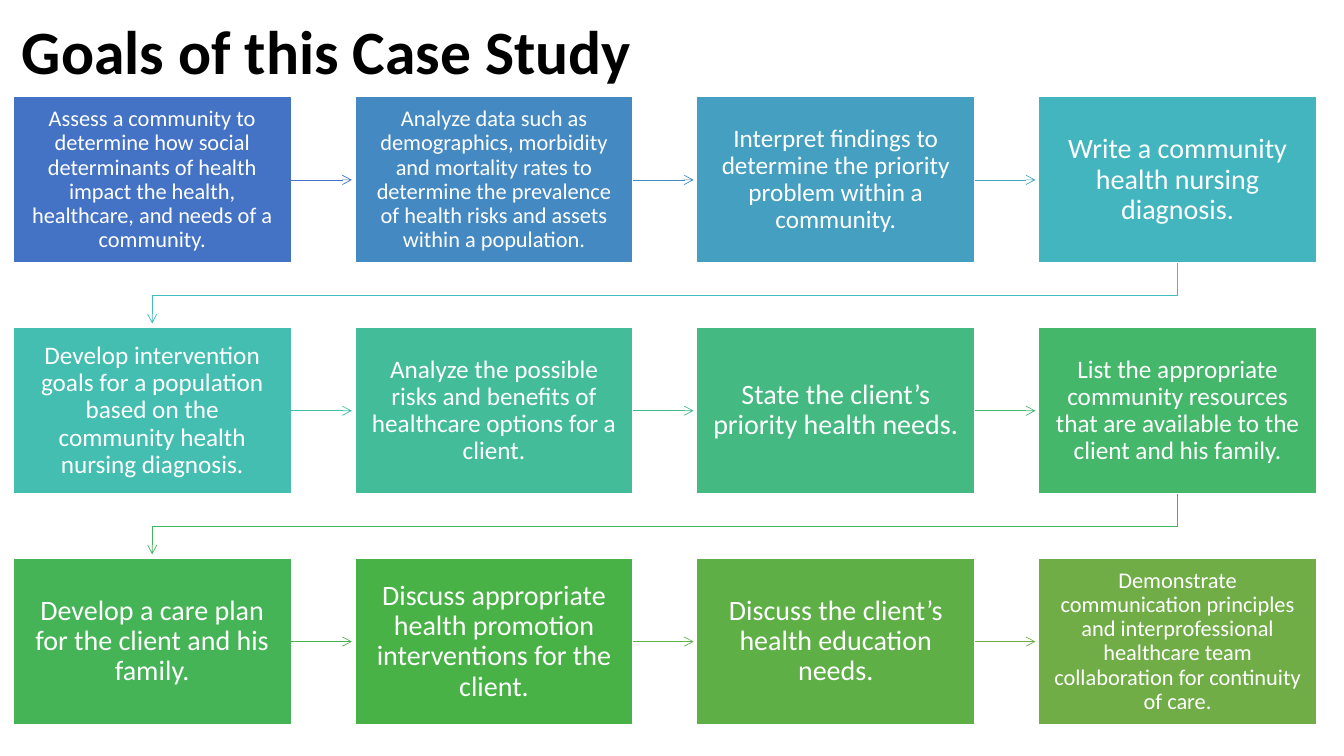
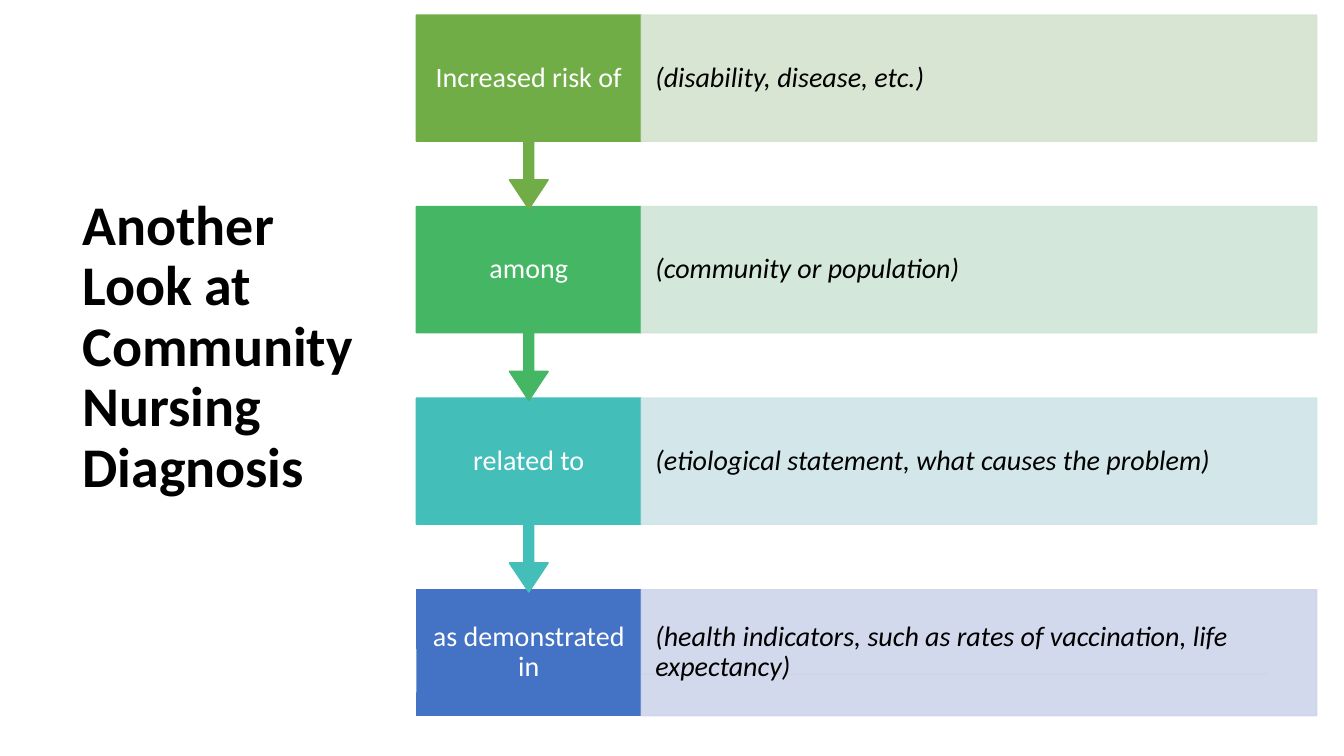
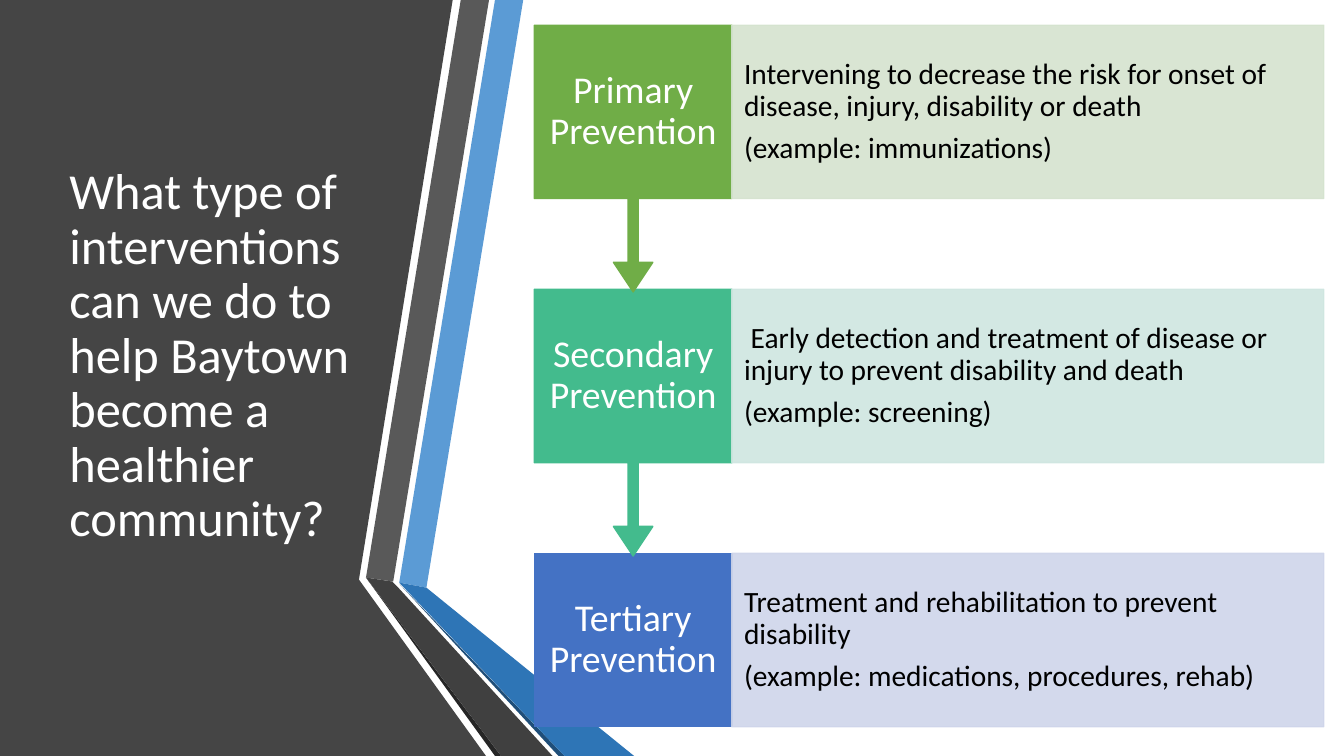
"""Build three community nursing slides: a goal chain and two step ladders."""
from dataclasses import dataclass
from typing import Any, Sequence

from lxml import etree
from pptx import Presentation
from pptx import util as u
from pptx.dml.color import RGBColor
from pptx.enum import shapes, text
from pptx.oxml.ns import qn

WIDTH, HEIGHT = 13.33, 7.5
FONT = "Calibri"
CENTER, LEFT = text.PP_ALIGN.CENTER, text.PP_ALIGN.LEFT
RECT = shapes.MSO_SHAPE.RECTANGLE
DOWN = shapes.MSO_SHAPE.DOWN_ARROW_CALLOUT

HEX = {
    "white": "FFFFFF", "black": "000000", "rule": "D5D5D5",
    "box0": "4472C4", "box1": "4489C2", "box2": "449FC1", "box3": "43B5BF",
    "box4": "43BEB1", "box5": "43BC99", "box6": "44B982", "box7": "44B76B",
    "box8": "45B456", "box9": "49B246", "box10": "5DAF46", "box11": "70AD47",
    "link0": "4472C4", "link1": "448BC2", "link2": "44A3C0", "link3": "43BBBF",
    "link4": "43BDA7", "link5": "43BB8D", "link6": "44B874", "link7": "45B55D",
    "link8": "46B246", "link9": "5BB046", "link10": "70AD47",
    "blue": "4472C4", "teal": "43BEB9", "mint": "43BB8D", "green": "45B664",
    "olive": "70AD47", "pale blue": "CFD5EA", "pale teal": "CFE5E8",
    "pale mint": "CFE6E0", "pale green": "CFE5D8", "pale olive": "D5E3CF",
    "slate": "454545", "sky": "5B9BD5", "gray": "595959", "coal": "262626",
    "navy": "1F4E79", "sea": "2E75B6", "dark": "404040",
}


@dataclass(frozen=True)
class Box:
    """Place and size in inches."""
    x: float
    y: float
    w: float
    h: float


@dataclass(frozen=True)
class Style:
    """Look of one text block."""
    size: float
    color: str = "white"
    bold: bool = False
    italic: bool = False
    align: Any = LEFT
    pad: tuple[float, float] = (0.1, 0.05)
    gap: float = 0


@dataclass(frozen=True)
class Goal:
    """One goal card."""
    size: float
    words: str


@dataclass(frozen=True)
class Step:
    """One ladder step with its label and notes."""
    tone: str
    label: str
    notes: tuple[str, ...]


@dataclass(frozen=True)
class Ladder:
    """Measures and text styles of a step ladder."""
    top: Box
    pitch: float
    wide: float
    label: Style
    note: Style


@dataclass(frozen=True)
class Facet:
    """One filled polygon."""
    tone: str
    points: tuple[tuple[float, float], ...]


GOALS = (
    Goal(16, "Assess a community to determine how social determinants of health "
             "impact the health, healthcare, and needs of a community."),
    Goal(16, "Analyze data such as demographics, morbidity and mortality rates to "
             "determine the prevalence of health risks and assets within a population."),
    Goal(18, "Interpret findings to determine the priority problem within a community."),
    Goal(20, "Write a community health nursing diagnosis."),
    Goal(18, "Develop intervention goals for a population based on the community "
             "health nursing diagnosis."),
    Goal(18, "Analyze the possible risks and benefits of healthcare options for a client."),
    Goal(20, "State the client’s priority health needs."),
    Goal(18, "List the appropriate community resources that are available to the "
             "client and his family."),
    Goal(20, "Develop a care plan for the client and his family."),
    Goal(20, "Discuss appropriate health promotion interventions for the client."),
    Goal(20, "Discuss the client’s health education needs."),
    Goal(16, "Demonstrate communication principles and interprofessional healthcare "
             "team collaboration for continuity of care."),
)
COLS = 4
CARD = Box(0.13, 0.96, 2.76, 1.65)
STRIDE = (3.39, 2.29)
REACH = 0.6

PARTS = (
    Step("olive", "Increased risk of", ("(disability, disease, etc.)",)),
    Step("green", "among", ("(community or population)",)),
    Step("teal", "related to", ("(etiological statement, what causes the problem)",)),
    Step("blue", "as demonstrated in",
         ("(health indicators, such as rates of vaccination, life expectancy)",)),
)
LEVELS = (
    Step("olive", "Primary Prevention",
         ("Intervening to decrease the risk for onset of disease, injury, "
          "disability or death", "(example: immunizations)")),
    Step("mint", "Secondary Prevention",
         (" Early detection and treatment of disease or injury to prevent "
          "disability and death", "(example: screening)")),
    Step("blue", "Tertiary Prevention",
         ("Treatment and rehabilitation to prevent disability",
          "(example: medications, procedures, rehab)")),
)
PHRASE = Ladder(Box(4.13, 0.15, 2.23, 1.25), 1.9, 6.7,
                Style(20, align=CENTER, pad=(0.16, 0.16)),
                Style(20, "black", italic=True, pad=(0.14, 0.28)))
PREVENT = Ladder(Box(5.3, 0.25, 1.96, 1.72), 2.62, 5.87,
                 Style(27, align=CENTER, pad=(0.14, 0.21)),
                 Style(21, "black", pad=(0.12, 0.29), gap=7))

FACETS = (
    Facet("slate", ((0, 0), (4.49, 0), (3.56, 5.75), (4.82, HEIGHT), (0, HEIGHT))),
    Facet("sky", ((3.96, 5.78), (4.23, 5.83), (5.19, 0), (4.91, 0))),
    Facet("gray", ((4.85, 0), (4.57, 0), (3.63, 5.73), (3.9, 5.77))),
    Facet("coal", ((3.63, 5.73), (4.91, HEIGHT), (4.97, HEIGHT))),
    Facet("navy", ((3.96, 5.79), (5.54, HEIGHT), (5.6, HEIGHT))),
    Facet("sea", ((3.96, 5.78), (5.6, HEIGHT), (6.29, HEIGHT), (4.23, 5.83))),
    Facet("dark", ((5.48, HEIGHT), (3.95, 5.83), (3.89, 5.77), (3.63, 5.73),
                   (4.97, HEIGHT))),
)


def tint(name: str) -> RGBColor:
    """Return a named colour."""
    return RGBColor.from_string(HEX[name])


def assign(target: Any, values: dict[str, Any]) -> None:
    """Set each named attribute on the target."""
    for key, value in values.items():
        setattr(target, key, value)


def place(box: Box) -> tuple[u.Length, ...]:
    """Return a box in slide units."""
    return tuple(u.Inches(n) for n in (box.x, box.y, box.w, box.h))


def write(shape: Any, lines: Sequence[str], style: Style) -> None:
    """Fill a shape with styled paragraphs."""
    frame = shape.text_frame
    across, down = (u.Inches(n) for n in style.pad)
    assign(frame, {"word_wrap": True, "vertical_anchor": text.MSO_ANCHOR.MIDDLE,
                   "margin_left": across, "margin_right": across,
                   "margin_top": down, "margin_bottom": down})
    for i, line in enumerate(lines):
        para = frame.add_paragraph() if i else frame.paragraphs[0]
        assign(para, {"alignment": style.align, "line_spacing": 0.9,
                      "space_before": u.Pt(style.gap if i else 0)})
        run = para.add_run()
        run.text = line
        assign(run.font, {"name": FONT, "size": u.Pt(style.size),
                          "bold": style.bold, "italic": style.italic})
        run.font.color.rgb = tint(style.color)


def title(slide: Any, box: Box, words: str, style: Style) -> None:
    """Add a slide title."""
    write(slide.shapes.add_textbox(*place(box)), [words], style)


def paint(shape: Any, fill: str, edge: str | None = None) -> None:
    """Give a shape a flat fill and an optional thin edge."""
    shape.shadow.inherit = False
    shape.fill.solid()
    shape.fill.fore_color.rgb = tint(fill)
    if edge:
        shape.line.color.rgb = tint(edge)
        shape.line.width = u.Pt(1)
    else:
        shape.line.fill.background()


def block(slide: Any, box: Box, fill: str, edge: str | None = None,
          kind: Any = RECT) -> Any:
    """Add a painted preset shape."""
    shape = slide.shapes.add_shape(kind, *place(box))
    paint(shape, fill, edge)
    return shape


def fade(shape: Any, share: int) -> None:
    """Set fill and line opacity in percent."""
    for node in shape._element.spPr.iter(qn("a:srgbClr")):
        etree.SubElement(node, qn("a:alpha"), val=str(share * 1000))


def trace(slide: Any, points: Sequence[tuple[float, float]], close: bool) -> Any:
    """Add an outline through points given in inches."""
    path = [(u.Inches(x), u.Inches(y)) for x, y in points]
    pen = slide.shapes.build_freeform(*path[0])
    pen.add_line_segments(path[1:], close=close)
    return pen.convert_to_shape()


def point(line: Any, tone: str) -> None:
    """Style a line as a thin open arrow."""
    line.line.color.rgb = tint(tone)
    line.line.width = u.Pt(0.5)
    props = line._element.spPr
    etree.SubElement(props.find(qn("a:ln")), qn("a:tailEnd"), type="arrow")
    if props.find(qn("a:effectLst")) is None:
        etree.SubElement(props, qn("a:effectLst"))


def chain(slide: Any) -> None:
    """Draw the goal cards and the arrows that join them."""
    for i, goal in enumerate(GOALS):
        row, col = divmod(i, COLS)
        box = Box(CARD.x + col * STRIDE[0], CARD.y + row * STRIDE[1], CARD.w, CARD.h)
        card = block(slide, box, f"box{i}", "white")
        write(card, [goal.words], Style(goal.size, align=CENTER, pad=(0.14, 0.14)))
        if i == len(GOALS) - 1:
            continue
        if col < COLS - 1:
            start, mid = box.x + box.w, box.y + box.h / 2
            ends = [u.Inches(n) for n in (start, mid, start + REACH, mid)]
            arrow = slide.shapes.add_connector(shapes.MSO_CONNECTOR.STRAIGHT, *ends)
            arrow.begin_connect(card, 3)
        else:
            right, left = box.x + box.w / 2, CARD.x + CARD.w / 2
            base = box.y + box.h
            turn = base + (STRIDE[1] - CARD.h) / 2
            arrow = trace(slide, ((right, base), (right, turn), (left, turn),
                                  (left, base + REACH)), False)
            arrow.fill.background()
            arrow.shadow.inherit = False
        point(arrow, f"link{i}")


def climb(slide: Any, plan: Ladder, steps: Sequence[Step]) -> None:
    """Draw a ladder from its last step up."""
    top, last = plan.top, len(steps) - 1
    for i, step in reversed(list(enumerate(steps))):
        y = top.y + i * plan.pitch
        tall = top.h if i == last else top.h / 0.65
        label = block(slide, Box(top.x, y, top.w, tall), step.tone, step.tone,
                      RECT if i == last else DOWN)
        if i < last:
            for slot, share in enumerate((0.05, 0.1, 0.15, 0.65)):
                label.adjustments[slot] = share
        write(label, [step.label], plan.label)
        pale = f"pale {step.tone}"
        note = block(slide, Box(top.x + top.w, y, plan.wide, top.h), pale, pale)
        fade(note, 90)
        write(note, step.notes, plan.note)


def main() -> None:
    """Build and save the deck."""
    deck = Presentation()
    assign(deck, {"slide_width": u.Inches(WIDTH), "slide_height": u.Inches(HEIGHT)})
    goals, look, care = (deck.slides.add_slide(deck.slide_layouts[6]) for _ in range(3))

    title(goals, Box(0.12, -0.18, 11.5, 1.45), "Goals of this Case Study",
          Style(44, "black", bold=True))
    chain(goals)

    title(look, Box(0.72, 0.47, 3.1, 5.97), "Another Look at Community Nursing Diagnosis",
          Style(40, "black", bold=True))
    block(look, Box(0.72, 6.68, 11.85, 0.02), "rule")
    climb(look, PHRASE, PARTS)
    block(look, Box(0.6, 6.44, 3.53, 0.43), "white")

    for facet in FACETS:
        paint(trace(care, facet.points, True), facet.tone)
    title(care, Box(0.59, 0.75, 3.04, 5.58),
          "What type of interventions can we do to help Baytown become a healthier "
          "community?", Style(36))
    climb(care, PREVENT, LEVELS)
    deck.save("out.pptx")


if __name__ == "__main__":
    main()
